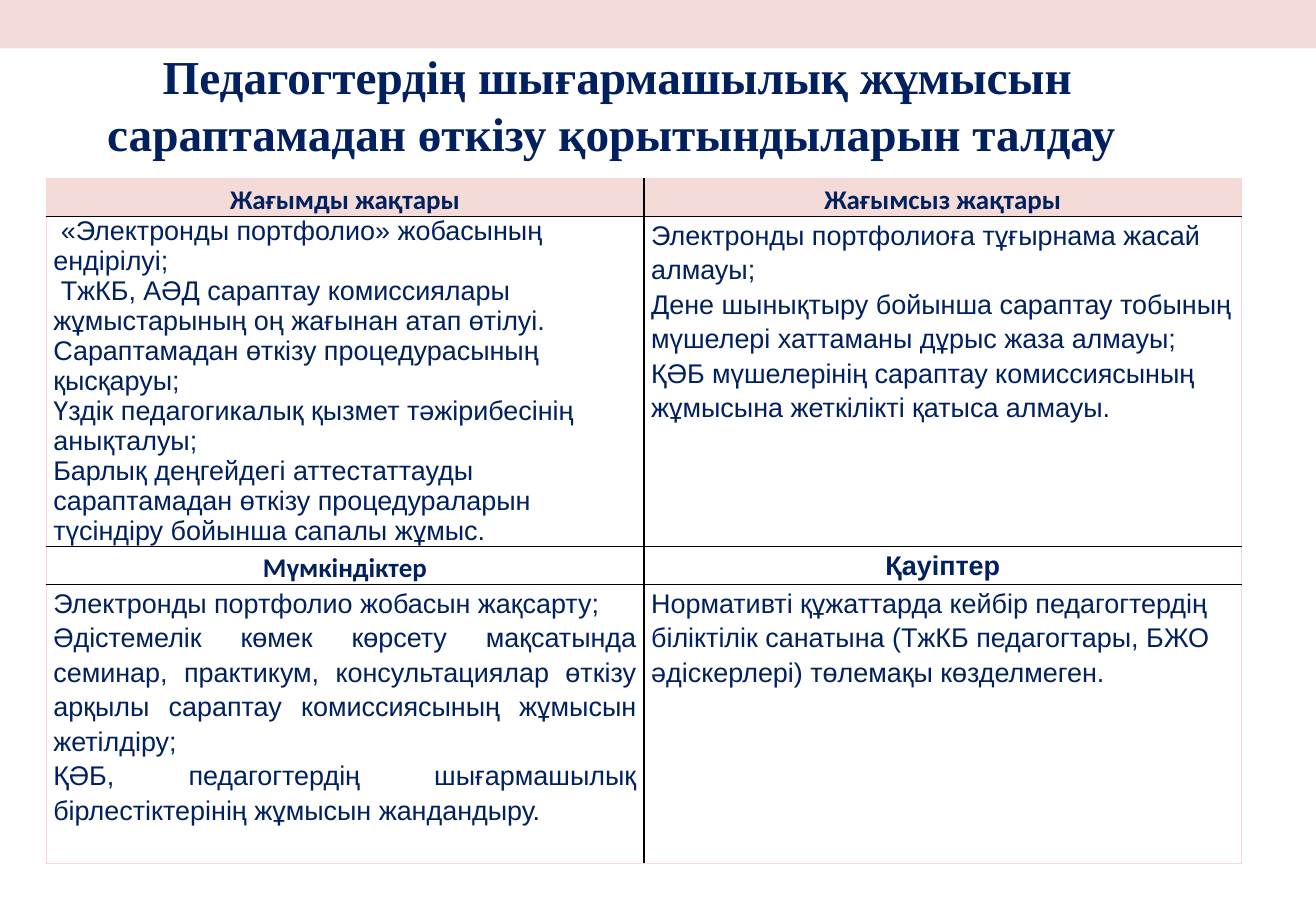
from dataclasses import dataclass

from lxml.etree import SubElement
from pptx import Presentation
from pptx.dml.color import RGBColor
from pptx.enum.shapes import MSO_SHAPE
from pptx.enum.text import MSO_ANCHOR, MSO_AUTO_SIZE, PP_ALIGN
from pptx.oxml.ns import qn
from pptx.util import Inches, Pt


@dataclass(frozen=True)
class Theme:
    """Colours, fonts, type sizes and line widths of the slide."""

    navy: str = "002060"
    pink: str = "F4DBD8"
    black: str = "000000"
    title_font: str = "Times New Roman"
    heading_font: str = "Calibri"
    body_font: str = "Arial"
    title_size: float = 28
    table_size: float = 16
    outer_line: float = 0.75
    inner_line: float = 1


THEME = Theme()
WIDTH, HEIGHT = Inches(10.83), Inches(7.5)
COLUMN_SHARES = [45.43, 45.43]
ROW_SHARES = [4.13, 36.2, 4.13, 30.6]
TITLE = " Педагогтердің шығармашылық жұмысын сараптамадан өткізу қорытындыларын талдау"
HEADING = {"alignment": PP_ALIGN.CENTER, "line_spacing": 1.15}
LOOSE = {"alignment": PP_ALIGN.LEFT, "line_spacing": 1.15}
TIGHT = {"alignment": PP_ALIGN.LEFT, "line_spacing": 1.0}
JUSTIFIED = {"alignment": PP_ALIGN.JUSTIFY, "line_spacing": 1.15}

STRENGTHS = [
    " «Электронды портфолио» жобасының ендірілуі;\v"
    " ТжКБ, АӘД сараптау комиссиялары жұмыстарының оң жағынан атап өтілуі.",
    "Сараптамадан өткізу процедурасының қысқаруы;",
    "Үздік педагогикалық қызмет тәжірибесінің анықталуы;",
    "Барлық деңгейдегі аттестаттауды сараптамадан өткізу процедураларын "
    "түсіндіру бойынша сапалы жұмыс.",
]
WEAKNESSES = [
    "Электронды портфолиоға тұғырнама жасай алмауы;",
    "Дене шынықтыру бойынша сараптау тобының мүшелері хаттаманы дұрыс жаза алмауы;",
    "ҚӘБ мүшелерінің сараптау комиссиясының жұмысына жеткілікті қатыса алмауы.",
]
OPPORTUNITIES = [
    "Электронды портфолио жобасын жақсарту;",
    "Әдістемелік көмек көрсету мақсатында семинар, практикум, консультациялар "
    "өткізу арқылы сараптау комиссиясының жұмысын жетілдіру;",
    "ҚӘБ, педагогтердің шығармашылық бірлестіктерінің жұмысын жандандыру.",
]
THREATS = [
    "Нормативті құжаттарда кейбір педагогтердің біліктілік санатына "
    "(ТжКБ педагогтары, БЖО әдіскерлері) төлемақы көзделмеген.",
]
CELLS = [
    [(["Жағымды жақтары"], HEADING, THEME.heading_font),
     (["Жағымсыз жақтары"], HEADING, THEME.heading_font)],
    [(STRENGTHS, TIGHT, THEME.body_font), (WEAKNESSES, LOOSE, THEME.body_font)],
    [(["Мүмкіндіктер"], HEADING, THEME.heading_font),
     (["Қауіптер"], HEADING, THEME.body_font)],
    [(OPPORTUNITIES, JUSTIFIED, THEME.body_font), (THREATS, LOOSE, THEME.body_font)],
]


def across(percent):
    """Return a share of the slide's width."""
    return int(WIDTH * percent / 100)


def down(percent):
    """Return a share of the slide's height."""
    return int(HEIGHT * percent / 100)


def apply(target, values):
    """Set every attribute named in a dict of format values."""
    for name, value in values.items():
        setattr(target, name, value)


def write(text_frame, texts, paragraph_format, font_name, size, bold):
    """Fill a text frame with equally formatted paragraphs."""
    for index, text in enumerate(texts):
        paragraph = text_frame.add_paragraph() if index else text_frame.paragraphs[0]
        paragraph.text = text
        apply(paragraph, paragraph_format)
        for run in paragraph.runs:
            apply(run.font, {"name": font_name, "size": Pt(size), "bold": bold})
            run.font.color.rgb = RGBColor.from_string(THEME.navy)


def add_band(slide):
    """Draw the pink band along the top edge."""
    band = slide.shapes.add_shape(MSO_SHAPE.RECTANGLE, 0, 0, WIDTH, down(5.33))
    band.shadow.inherit = False
    band.fill.solid()
    band.fill.fore_color.rgb = RGBColor.from_string(THEME.pink)
    band.line.fill.background()


def add_title(slide):
    """Move and format the title placeholder."""
    title = slide.shapes.title
    apply(title, {"left": 0, "top": down(4.53), "width": across(92.89), "height": down(13.87)})
    apply(title.text_frame, {"word_wrap": True, "auto_size": MSO_AUTO_SIZE.NONE,
                             "vertical_anchor": MSO_ANCHOR.MIDDLE})
    write(title.text_frame, [TITLE], {"alignment": PP_ALIGN.CENTER, "line_spacing": 1.0},
          THEME.title_font, THEME.title_size, True)


def set_borders(cell, outer_sides):
    """Draw pink borders on the outer sides and black ones inside."""
    properties = cell._tc.get_or_add_tcPr()
    for index, side in enumerate("LRTB"):
        outer = side in outer_sides
        width = THEME.outer_line if outer else THEME.inner_line
        line = SubElement(properties, qn(f"a:ln{side}"), w=str(Pt(width)))
        fill = SubElement(line, qn("a:solidFill"))
        SubElement(fill, qn("a:srgbClr"), val=THEME.pink if outer else THEME.black)
        properties.insert(index, line)


def format_cell(cell, row, column):
    """Fill one cell with its text, background and borders."""
    texts, paragraph_format, font_name = CELLS[row][column]
    apply(cell, {"margin_left": Inches(0.06), "margin_right": Inches(0.06),
                 "margin_top": 0, "margin_bottom": 0})
    write(cell.text_frame, texts, paragraph_format, font_name,
          THEME.table_size, paragraph_format is HEADING)
    if row == 0:
        cell.fill.solid()
        cell.fill.fore_color.rgb = RGBColor.from_string(THEME.pink)
    else:
        cell.fill.background()
    vertical = {0: "T", len(ROW_SHARES) - 1: "B"}.get(row, "")
    set_borders(cell, "LR"[column] + vertical)


def add_analysis_table(slide):
    """Add the table of strengths, weaknesses, opportunities and threats."""
    table = slide.shapes.add_table(
        len(ROW_SHARES), len(COLUMN_SHARES), across(3.5), down(19.6),
        across(sum(COLUMN_SHARES)), down(sum(ROW_SHARES))).table
    apply(table, {"first_row": False, "horz_banding": False})
    for column, share in zip(table.columns, COLUMN_SHARES):
        column.width = across(share)
    for row_index, share in enumerate(ROW_SHARES):
        table.rows[row_index].height = down(share)
        for column_index in range(len(COLUMN_SHARES)):
            format_cell(table.cell(row_index, column_index), row_index, column_index)


def main():
    """Build and save the slide."""
    presentation = Presentation()
    apply(presentation, {"slide_width": WIDTH, "slide_height": HEIGHT})
    slide = presentation.slides.add_slide(presentation.slide_layouts[5])
    add_band(slide)
    add_analysis_table(slide)
    add_title(slide)
    presentation.save("out.pptx")


if __name__ == "__main__":
    main()
